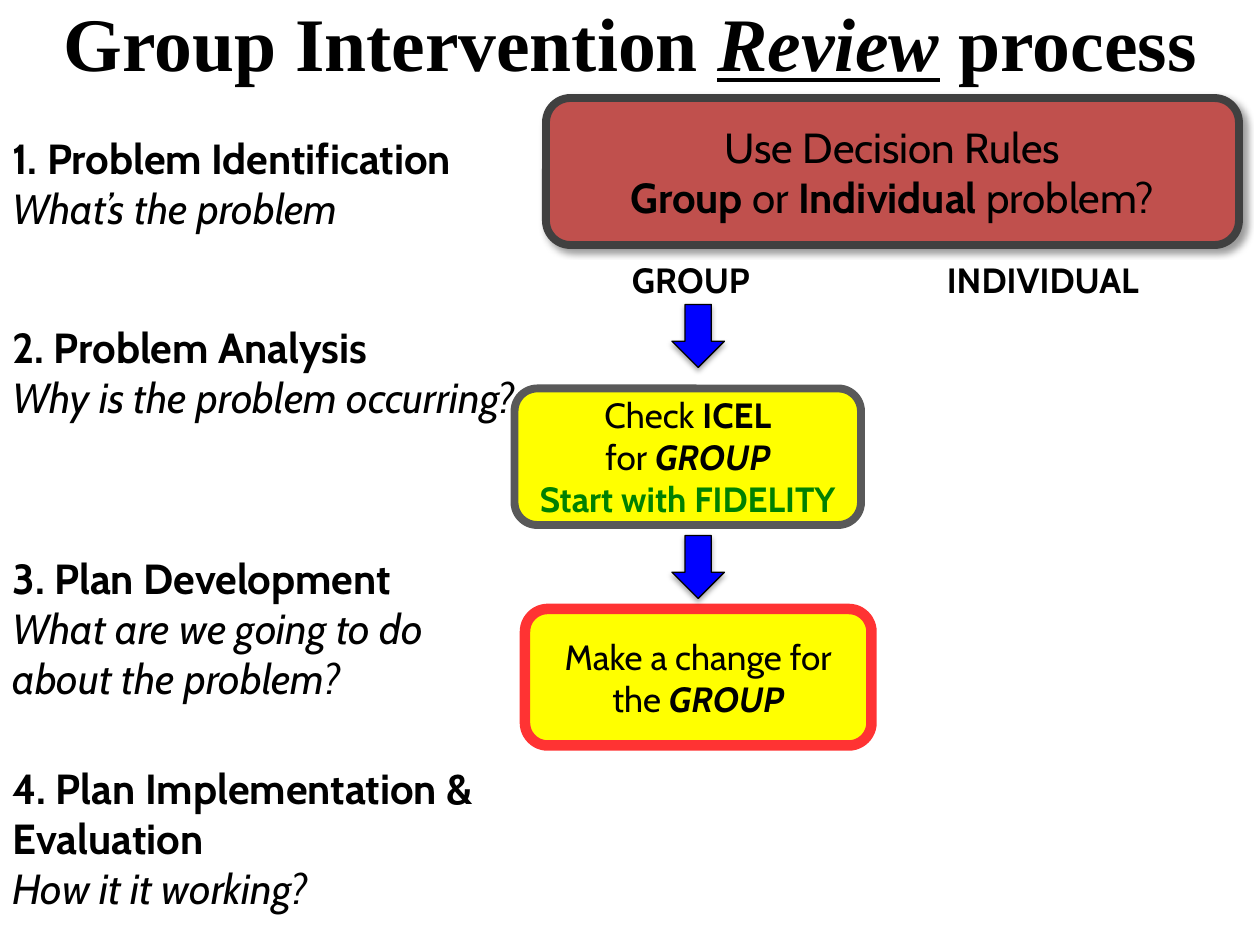
"""Build the slide that shows the group intervention review process."""
import dataclasses
import typing

import lxml.etree
import pptx
import pptx.dml.color
import pptx.enum.shapes
import pptx.enum.text
import pptx.oxml.ns
import pptx.util

Pt = pptx.util.Pt
Kind = pptx.enum.shapes.MSO_SHAPE
Align = pptx.enum.text.PP_ALIGN
Mid = pptx.enum.text.MSO_ANCHOR.MIDDLE
FONT = "Cabin"
HUES = {
    "ink": "000000", "red": "C0504D", "dark": "404040", "gray": "595959",
    "gold": "FFFF00", "blue": "0000FF", "green": "008000", "rim": "FF3333",
}


class Run(typing.NamedTuple):
    text: str
    style: str = ""


class Line(typing.NamedTuple):
    runs: tuple[Run, ...]
    hue: str = "ink"


class Area(typing.NamedTuple):
    left: float
    top: float
    width: float
    height: float


class Shade(typing.NamedTuple):
    alpha: int
    blur: float
    gap: float
    angle: int


@dataclasses.dataclass
class Step:
    area: Area
    head: str
    ask: str


@dataclasses.dataclass
class Box:
    area: Area
    fill: str
    edge: str
    weight: float
    size: float
    lines: tuple[Line, ...]
    shade: Shade | None = None


STEPS = (
    Step(Area(0, 72, 336, 65.5), "1. Problem Identification", "What’s the problem"),
    Step(Area(0, 180, 317.5, 94.5), "2. Problem Analysis", "Why is the problem occurring?"),
    Step(Area(0, 312, 276, 94.5), "3. Plan Development",
         "What are we going to do about the problem?"),
    Step(Area(0, 432, 318, 94.5), "4. Plan Implementation & Evaluation", "How it it working?"),
)
BOXES = (
    Box(Area(312, 56, 396, 84), "red", "dark", 4.5, 24, (
        Line((Run("Use Decision Rules"),)),
        Line((Run("Group", "b"), Run(" or "), Run("Individual", "b"), Run(" problem?"))),
    ), Shade(40, 4, 3, 45)),
    Box(Area(294, 222, 198, 78), "gold", "gray", 4.5, 20, (
        Line((Run("Check "), Run("ICEL", "b"))),
        Line((Run("for "), Run("GROUP", "bi"))),
        Line((Run("Start with FIDELITY", "b"),), "green"),
    )),
    Box(Area(300, 348, 198, 78), "gold", "rim", 6, 20, (
        Line((Run("Make a change for the "), Run("GROUP", "bi"))),
    )),
)
LABELS = {
    "GROUP": Area(354, 144, 90, 31.5),
    "INDIVIDUAL": Area(534, 144, 144, 31.5),
}
ARROWS = (Area(384, 174, 30, 36), Area(384, 306, 30, 36))


def tint(name: str) -> pptx.dml.color.RGBColor:
    """Look up a colour by name."""
    return pptx.dml.color.RGBColor.from_string(HUES[name])


def mark(font, style: str) -> None:
    """Set bold, italic and underline from style letters."""
    font.bold = "b" in style
    font.italic = "i" in style
    font.underline = "u" in style


def write(frame, lines: tuple[Line, ...], size: float, align=Align.LEFT, face: str = FONT) -> None:
    """Fill a text frame with styled lines."""
    frame.word_wrap = True
    for spot, line in enumerate(lines):
        para = frame.add_paragraph() if spot else frame.paragraphs[0]
        para.alignment = align
        para.font.size = Pt(size)
        para.font.name = face
        para.font.color.rgb = tint(line.hue)
        same = len({run.style for run in line.runs}) == 1
        if same:
            mark(para.font, line.runs[0].style)
        for part in line.runs:
            run = para.add_run()
            run.text = part.text
            if not same:
                mark(run.font, part.style)


def cast(shape, shade: Shade) -> None:
    """Give a shape an outer shadow."""
    tag = pptx.oxml.ns.qn
    list_ = shape._element.spPr.find(tag("a:effectLst"))
    outer = lxml.etree.SubElement(
        list_, tag("a:outerShdw"), blurRad=str(Pt(shade.blur)), dist=str(Pt(shade.gap)),
        dir=str(shade.angle * 60000), algn="tl", rotWithShape="0")
    hue = lxml.etree.SubElement(outer, tag("a:srgbClr"), val=HUES["ink"])
    lxml.etree.SubElement(hue, tag("a:alpha"), val=str(shade.alpha * 1000))


def draw(slide, kind, area: Area, fill: str, edge: str, weight: float, shade: Shade | None):
    """Add a filled and outlined shape."""
    shape = slide.shapes.add_shape(kind, *map(Pt, area))
    shape.shadow.inherit = False
    shape.fill.solid()
    shape.fill.fore_color.rgb = tint(fill)
    shape.line.color.rgb = tint(edge)
    shape.line.width = Pt(weight)
    if shade:
        cast(shape, shade)
    return shape


def note(slide, area: Area, lines: tuple[Line, ...], size: float) -> None:
    """Add a plain text box."""
    write(slide.shapes.add_textbox(*map(Pt, area)).text_frame, lines, size)


def head(slide) -> None:
    """Place and fill the title."""
    title = slide.shapes.title
    title.left, title.top, title.width, title.height = map(Pt, (0, 4.5, 720, 38))
    frame = title.text_frame
    frame.auto_size = pptx.enum.text.MSO_AUTO_SIZE.NONE
    frame.vertical_anchor = Mid
    runs = (Run("Group Intervention ", "b"), Run("Review", "biu"), Run(" process", "b"))
    write(frame, (Line(runs),), 43.2, Align.CENTER, "Times New Roman")


def main() -> None:
    """Build and save the deck."""
    deck = pptx.Presentation()
    deck.slide_width, deck.slide_height = Pt(720), Pt(540)
    slide = deck.slides.add_slide(deck.slide_layouts.get_by_name("Title Only"))
    head(slide)
    for step in STEPS:
        note(slide, step.area, (Line((Run(step.head, "b"),)), Line((Run(step.ask, "i"),))), 24)
    for text, area in LABELS.items():
        note(slide, area, (Line((Run(text, "b"),)),), 20)
    for box in BOXES:
        shape = draw(slide, Kind.ROUNDED_RECTANGLE, box.area, box.fill, box.edge,
                     box.weight, box.shade)
        shape.text_frame.vertical_anchor = Mid
        write(shape.text_frame, box.lines, box.size, Align.CENTER)
    for area in ARROWS:
        draw(slide, Kind.DOWN_ARROW, area, "blue", "ink", 0.75, Shade(35, 3.1, 1.8, 90))
    deck.save("out.pptx")


if __name__ == "__main__":
    main()
